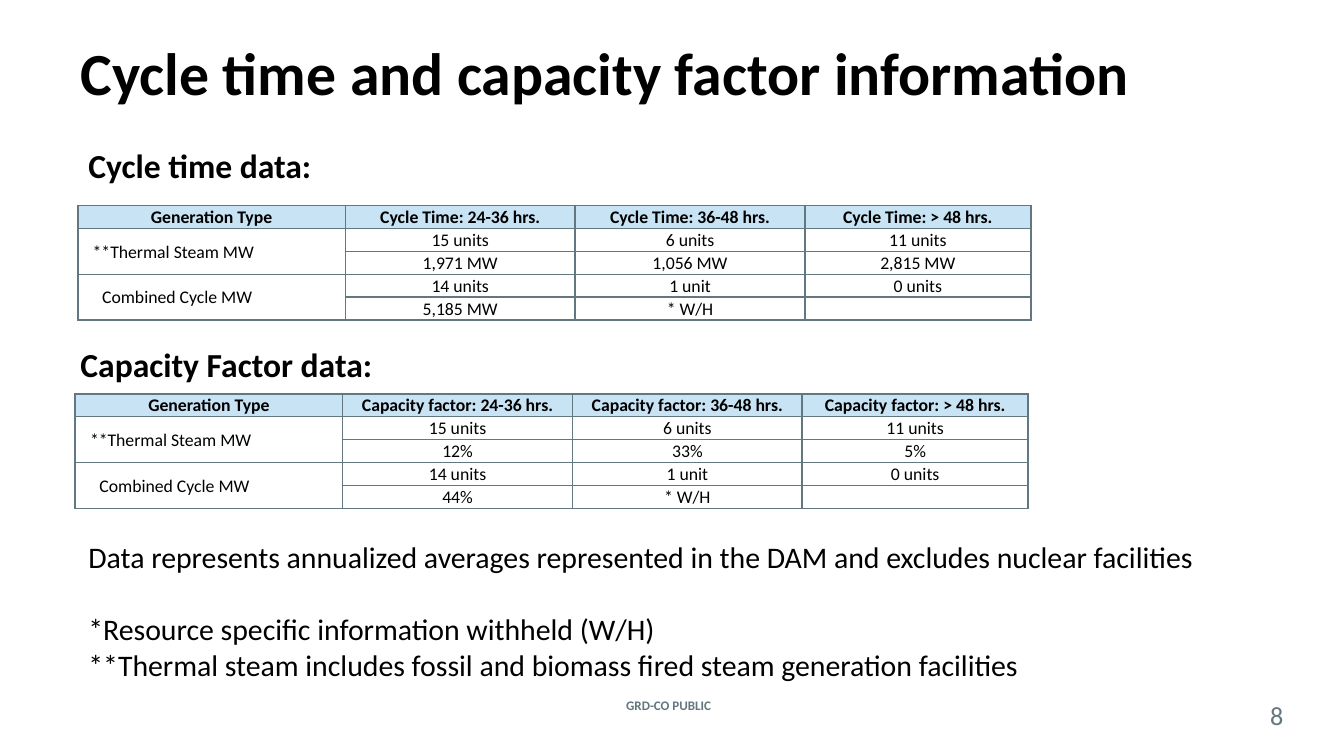
"""Build the slide on cycle time and capacity factor by generation type."""
from dataclasses import dataclass

from lxml.etree import SubElement
from pptx import Presentation
from pptx.dml.color import RGBColor
from pptx.enum.text import MSO_ANCHOR, MSO_AUTO_SIZE, PP_ALIGN
from pptx.oxml.ns import qn
from pptx.util import Inches, Pt


@dataclass(frozen=True)
class Theme:
    font: str = "Calibri"
    ink: str = "000000"
    slate: str = "62777F"
    header: str = "C8E3F4"
    paper: str = "FFFFFF"
    title: float = 32
    heading: float = 18
    notes: float = 16
    number: float = 14
    cell: float = 9.5
    footer: float = 7


theme = Theme()


def write(frame, lines, size, color=theme.ink, bold=False, align=PP_ALIGN.LEFT, **frame_format):
    settings = {"word_wrap": True, "auto_size": MSO_AUTO_SIZE.NONE, **frame_format}
    for name, value in settings.items():
        setattr(frame, name, value)
    frame.text = "\n".join(lines)
    for paragraph in frame.paragraphs:
        paragraph.alignment = align
        for run in paragraph.runs:
            for name, value in {"name": theme.font, "size": Pt(size), "bold": bold}.items():
                setattr(run.font, name, value)
            run.font.color.rgb = RGBColor.from_string(color)


def format_cell(cell, fill, margins):
    for name, value in margins.items():
        setattr(cell, name, Inches(value))
    properties = cell._tc.get_or_add_tcPr()
    for side in ("lnL", "lnR", "lnT", "lnB"):
        border = SubElement(properties, qn(f"a:{side}"), w=str(Pt(1)))
        border_fill = SubElement(border, qn("a:solidFill"))
        SubElement(border_fill, qn("a:srgbClr"), val=theme.slate)
    cell.fill.solid()
    cell.fill.fore_color.rgb = RGBColor.from_string(fill)


presentation = Presentation()
presentation.slide_width = Inches(10)
presentation.slide_height = Inches(10 * 9 / 16)
slide = presentation.slides.add_slide(presentation.slide_layouts[5])

title = slide.shapes.title
title_place = {"left": 0.5, "top": 0.06, "width": 9, "height": 0.94}
for name, value in title_place.items():
    setattr(title, name, Inches(value))
write(title.text_frame, ["Cycle time and capacity factor information"], theme.title,
      bold=True, vertical_anchor=MSO_ANCHOR.MIDDLE)

headings = [
    ("Cycle time data:", 0.56, 1.03, 2.25),
    ("Capacity Factor data:", 0.5, 2.51, 3.42),
]
for words, left, top, width in headings:
    heading = slide.shapes.add_textbox(Inches(left), Inches(top), Inches(width), Inches(0.4))
    write(heading.text_frame, [words], theme.heading, bold=True)

ranges = ["24-36 hrs.", "36-48 hrs.", "> 48 hrs."]
thermal_units = ["**Thermal Steam MW", "15 units", "6 units", "11 units"]
combined_units = ["Combined Cycle MW", "14 units", "1 unit", "0 units"]
column_widths = [1.99, 1.71, 1.71, 1.68]
row_height = 0.17
label_indents = {1: 0.11, 3: 0.18}
datasets = [
    ("Cycle Time", 0.58, 1.53, ["1,971 MW", "1,056 MW", "2,815 MW"], "5,185 MW"),
    ("Capacity factor", 0.56, 2.93, ["12%", "33%", "5%"], "44%"),
]
for measure, left, top, thermal_values, combined_value in datasets:
    rows = [
        ["Generation Type", *(f"{measure}: {hours}" for hours in ranges)],
        thermal_units,
        ["", *thermal_values],
        combined_units,
        ["", combined_value, "* W/H", ""],
    ]
    table = slide.shapes.add_table(
        len(rows), len(column_widths), Inches(left), Inches(top),
        Inches(sum(column_widths)), Inches(row_height * len(rows))).table
    table.horz_banding = False
    for column, width in zip(table.columns, column_widths):
        column.width = Inches(width)
    for row_index, row in enumerate(rows):
        table.rows[row_index].height = Inches(row_height)
        for column_index, words in enumerate(row):
            cell = table.cell(row_index, column_index)
            is_header = row_index == 0
            is_label = column_index == 0 and not is_header
            indent = label_indents.get(row_index, 0.01) if is_label else 0.01
            format_cell(cell, theme.header if is_header else theme.paper,
                        {"margin_left": indent, "margin_right": 0.01,
                         "margin_top": 0.01, "margin_bottom": 0})
            cell.vertical_anchor = MSO_ANCHOR.MIDDLE if is_label else MSO_ANCHOR.BOTTOM
            write(cell.text_frame, [words], theme.cell, bold=is_header,
                  align=PP_ALIGN.LEFT if is_label else PP_ALIGN.CENTER)
            if not words:
                SubElement(cell.text_frame.paragraphs[0]._p, qn("a:endParaRPr"),
                           sz=str(int(theme.cell * 100)))
    for label_row in label_indents:
        table.cell(label_row, 0).merge(table.cell(label_row + 1, 0))

notes = slide.shapes.add_textbox(Inches(0.56), Inches(3.96), Inches(8.94), Inches(1.18))
write(notes.text_frame, [
    "Data represents annualized averages represented in the DAM and excludes nuclear facilities",
    "*Resource specific information withheld (W/H)",
    "**Thermal steam includes fossil and biomass fired steam generation facilities",
], theme.notes)
notes.text_frame.paragraphs[1].space_before = Pt(19.5)

margin_names = ("margin_left", "margin_right", "margin_top", "margin_bottom")
small_print = [
    ("GRD-CO PUBLIC", 4.24, 5.19, 1.47, 0.12, theme.footer, True),
    ("8", 9.29, 5.21, 0.42, 0.22, theme.number, False),
]
for words, left, top, width, height, size, bold in small_print:
    mark = slide.shapes.add_textbox(Inches(left), Inches(top), Inches(width), Inches(height))
    write(mark.text_frame, [words], size, theme.slate, bold, PP_ALIGN.CENTER,
          vertical_anchor=MSO_ANCHOR.MIDDLE, **dict.fromkeys(margin_names, 0))

presentation.save("out.pptx")
